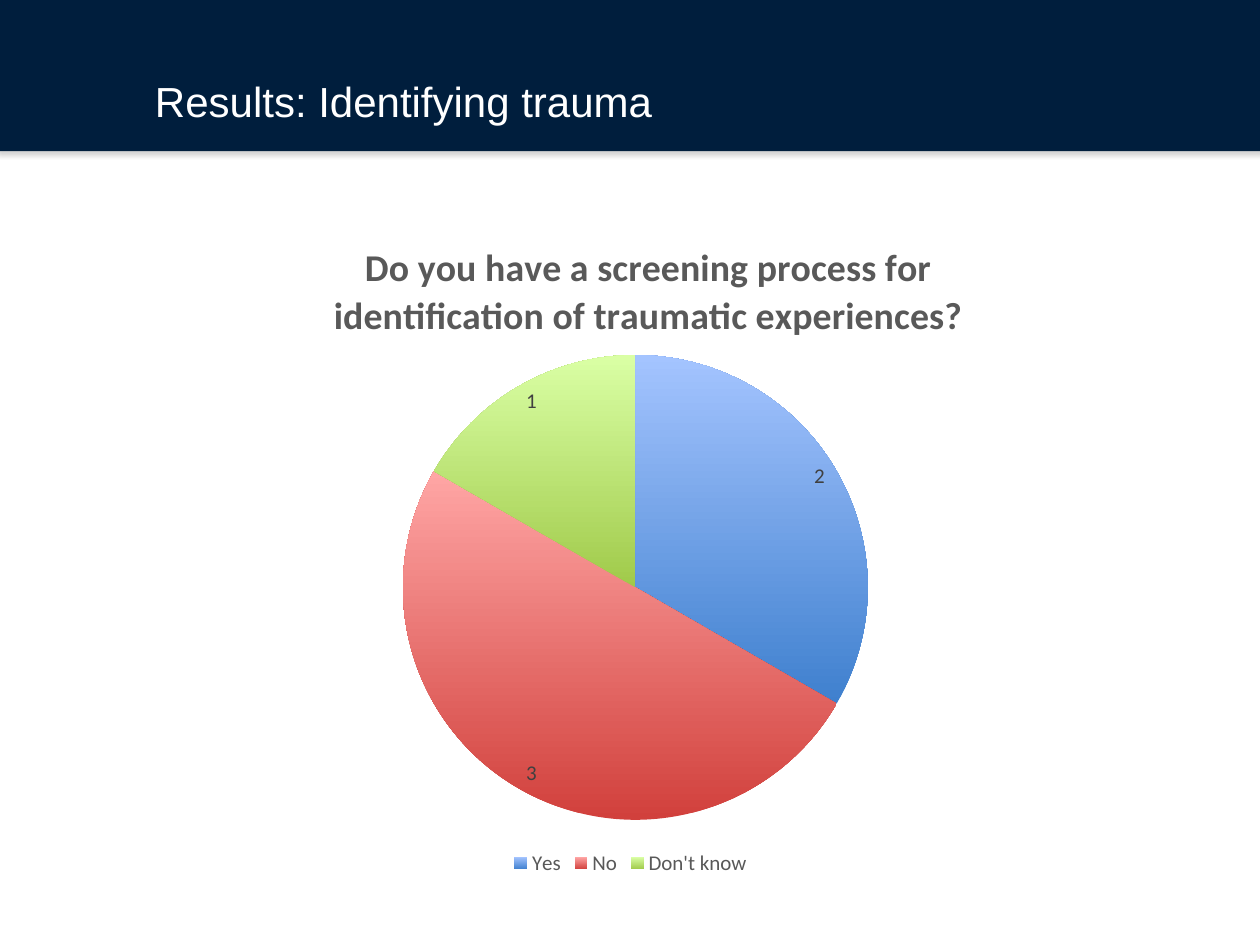
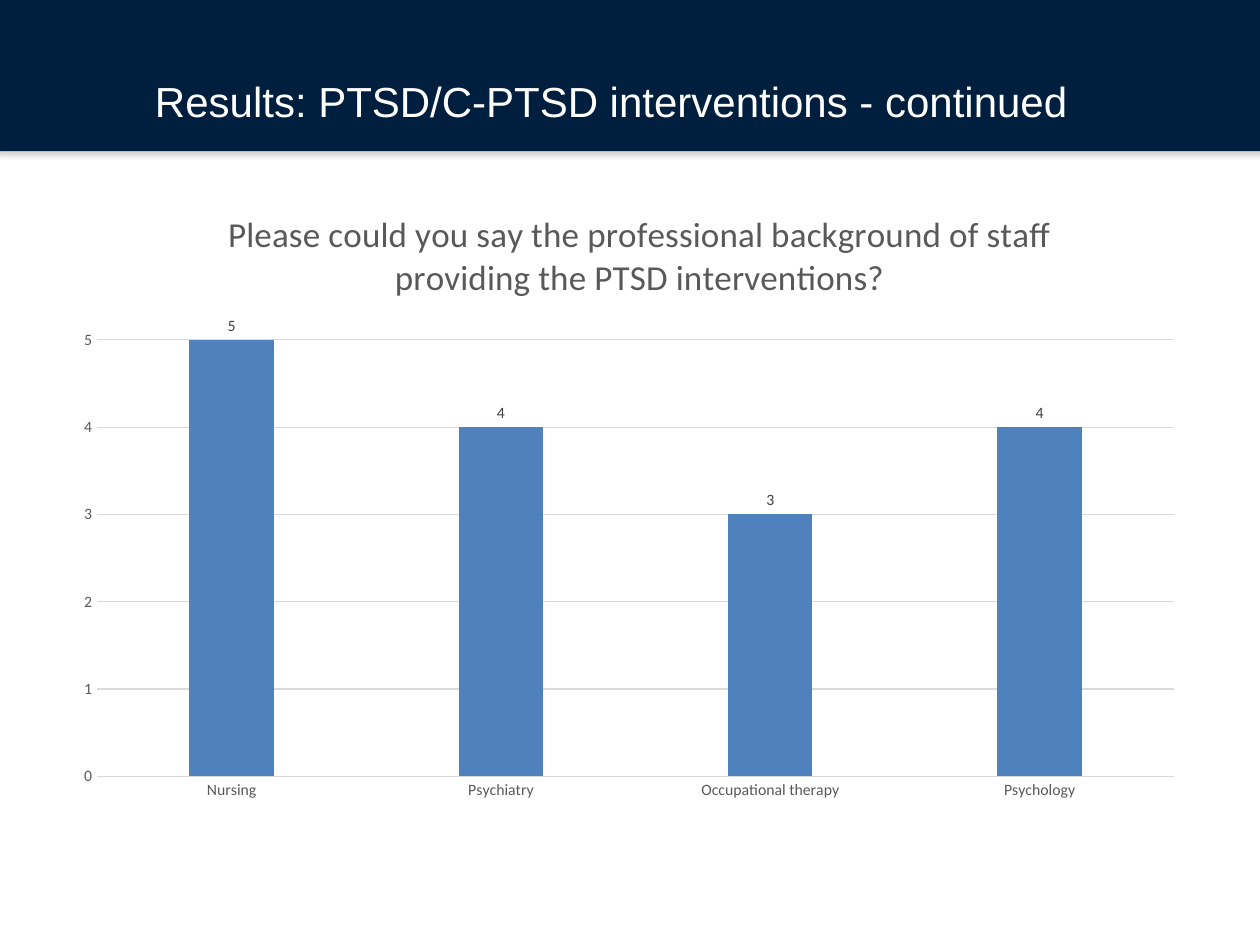
from pptx import Presentation
from pptx.chart.data import CategoryChartData
from pptx.dml.color import RGBColor
from pptx.enum.chart import XL_CHART_TYPE, XL_LABEL_POSITION, XL_LEGEND_POSITION, XL_TICK_MARK
from pptx.enum.shapes import MSO_SHAPE
from pptx.enum.text import MSO_ANCHOR, MSO_AUTO_SIZE, PP_ALIGN
from pptx.oxml import parse_xml
from pptx.oxml.ns import nsdecls, qn
from pptx.util import Inches, Pt

NAVY = RGBColor(0x00, 0x1E, 0x3D)
WHITE = RGBColor(0xFF, 0xFF, 0xFF)
BLUE = RGBColor(0x4F, 0x81, 0xBD)
TEXT_GREY = RGBColor(0x59, 0x59, 0x59)
LABEL_GREY = RGBColor(0x40, 0x40, 0x40)
GRID_GREY = RGBColor(0xD9, 0xD9, 0xD9)
# Bottom and top colour of each pie slice
SLICE_GRADIENTS = [
    (RGBColor(0x3F, 0x80, 0xCE), RGBColor(0xA4, 0xC4, 0xFF)),
    (RGBColor(0xD1, 0x40, 0x3C), RGBColor(0xFF, 0xA6, 0xA5)),
    (RGBColor(0xA0, 0xCA, 0x4A), RGBColor(0xDA, 0xFF, 0xA5)),
]
BAND_SHADOW = (
    f'<a:effectLst {nsdecls("a")}><a:outerShdw blurRad="{Pt(3.1)}" dist="{Pt(1.8)}" '
    'dir="5400000" rotWithShape="0"><a:srgbClr val="808080"><a:alpha val="35000"/>'
    '</a:srgbClr></a:outerShdw></a:effectLst>'
)


def set_layout(element, index, target, **fractions):
    """Place a chart part by fractions of the chart's size."""
    for layout in element.findall(qn("c:layout")):
        element.remove(layout)
    modes = '<c:xMode val="edge"/><c:yMode val="edge"/>'
    places = "".join(f'<c:{key} val="{value}"/>' for key, value in fractions.items())
    element.insert(index, parse_xml(
        f'<c:layout {nsdecls("c")}><c:manualLayout>{target}{modes}{places}'
        '</c:manualLayout></c:layout>'))


def add_chart_slide(heading, chart_type, answers, box, question, question_size, bold,
                    label_size, title_place, plot_place):
    """Add a slide with the navy band, its heading and one titled chart."""
    slide = presentation.slides.add_slide(presentation.slide_layouts[5])

    # Heading
    title = slide.shapes.title
    title.left, title.top, title.width, title.height = map(Inches, (1.16, 0.56, 8.67, 0.48))
    frame = title.text_frame
    frame.text = heading
    frame.word_wrap = True
    frame.auto_size = MSO_AUTO_SIZE.SHAPE_TO_FIT_TEXT
    frame.vertical_anchor = MSO_ANCHOR.TOP
    frame.margin_left = frame.margin_right = Inches(0.07)
    frame.margin_top = frame.margin_bottom = Inches(0.04)
    paragraph = frame.paragraphs[0]
    paragraph.alignment = PP_ALIGN.LEFT
    paragraph.font.name = "Arial"
    paragraph.font.size = Pt(24)
    paragraph.font.color.rgb = WHITE

    # Band behind the heading
    band = slide.shapes.add_shape(
        MSO_SHAPE.RECTANGLE, Inches(-0.03), Inches(-0.01), Inches(10.09), Inches(1.21))
    band.fill.solid()
    band.fill.fore_color.rgb = NAVY
    band.line.fill.background()
    band.element.spPr.append(parse_xml(BAND_SHADOW))
    title.element.addprevious(band.element)

    # Chart and its title
    data = CategoryChartData()
    data.categories = list(answers)
    data.add_series("Series 1", list(answers.values()))
    chart = slide.shapes.add_chart(chart_type, *map(Inches, box), data).chart
    chart.font.name = "Calibri"
    chart.font.size = Pt(10)
    chart.has_title = True
    chart.chart_title.include_in_layout = False
    chart.chart_title.text_frame.text = question
    font = chart.chart_title.text_frame.paragraphs[0].font
    font.name = "Calibri"
    font.size = Pt(question_size)
    font.bold = bold
    font.color.rgb = TEXT_GREY

    # Value labels
    plot = chart.plots[0]
    plot.has_data_labels = True
    labels = plot.data_labels
    labels.show_value = True
    labels.font.name = "Calibri"
    labels.font.size = Pt(label_size)
    labels.font.color.rgb = LABEL_GREY

    # Places of the chart title and the plot
    left, top = title_place
    set_layout(chart.chart_title.element, 1, "", x=left, y=top)
    left, top, width, height = plot_place
    set_layout(chart.element.find(".//" + qn("c:plotArea")), 0,
               '<c:layoutTarget val="inner"/>', x=left, y=top, w=width, h=height)
    return chart


presentation = Presentation()
presentation.slide_width = Inches(10)
presentation.slide_height = Inches(7.5)

# Slide 1: screening pie
chart = add_chart_slide(
    "Results: Identifying trauma", XL_CHART_TYPE.PIE,
    {"Yes": 2, "No": 3, "Don't know": 1}, (1.24, 1.64, 7.53, 5.35),
    "Do you have a screening process for identification of traumatic experiences?",
    21.6, True, 12, (0.18, 0.04), (0.26, 0.22, 0.49, 0.69))
plot = chart.plots[0]
plot.vary_by_categories = True
plot.data_labels.position = XL_LABEL_POSITION.BEST_FIT
for index, colors in enumerate(SLICE_GRADIENTS):
    fill = plot.series[0].points[index].format.fill
    fill.gradient()
    fill.gradient_angle = 90
    for stop, color in zip(fill.gradient_stops, colors):
        stop.color.rgb = color
chart.has_legend = True
chart.legend.position = XL_LEGEND_POSITION.BOTTOM
chart.legend.include_in_layout = False
chart.legend.font.name = "Calibri"
chart.legend.font.size = Pt(12)
chart.legend.font.color.rgb = TEXT_GREY

# Slide 2: staff background columns
chart = add_chart_slide(
    "Results: PTSD/C-PTSD interventions - continued", XL_CHART_TYPE.COLUMN_CLUSTERED,
    {"Nursing": 5, "Psychiatry": 4, "Occupational therapy": 3, "Psychology": 4},
    (0.5, 1.51, 9, 4.95),
    "Please could you say the professional background of staff providing the PTSD interventions?",
    20, False, 9, (0.14, 0.02), (0.03, 0.24, 0.95, 0.7))
chart.has_legend = False
plot = chart.plots[0]
plot.vary_by_categories = False
plot.gap_width = 219
plot.overlap = -27
plot.data_labels.position = XL_LABEL_POSITION.OUTSIDE_END
fill = plot.series[0].format.fill
fill.solid()
fill.fore_color.rgb = BLUE

# Axes
value_axis = chart.value_axis
value_axis.minimum_scale = 0
value_axis.maximum_scale = 5
value_axis.major_unit = 1
value_axis.has_major_gridlines = True
for axis in (chart.category_axis, value_axis):
    axis.major_tick_mark = axis.minor_tick_mark = XL_TICK_MARK.NONE
    axis.tick_labels.font.name = "Calibri"
    axis.tick_labels.font.size = Pt(9)
    axis.tick_labels.font.color.rgb = TEXT_GREY
for line in (chart.category_axis.format.line, value_axis.major_gridlines.format.line):
    line.color.rgb = GRID_GREY
    line.width = Pt(0.75)
value_axis.format.line.fill.background()

presentation.save("out.pptx")
